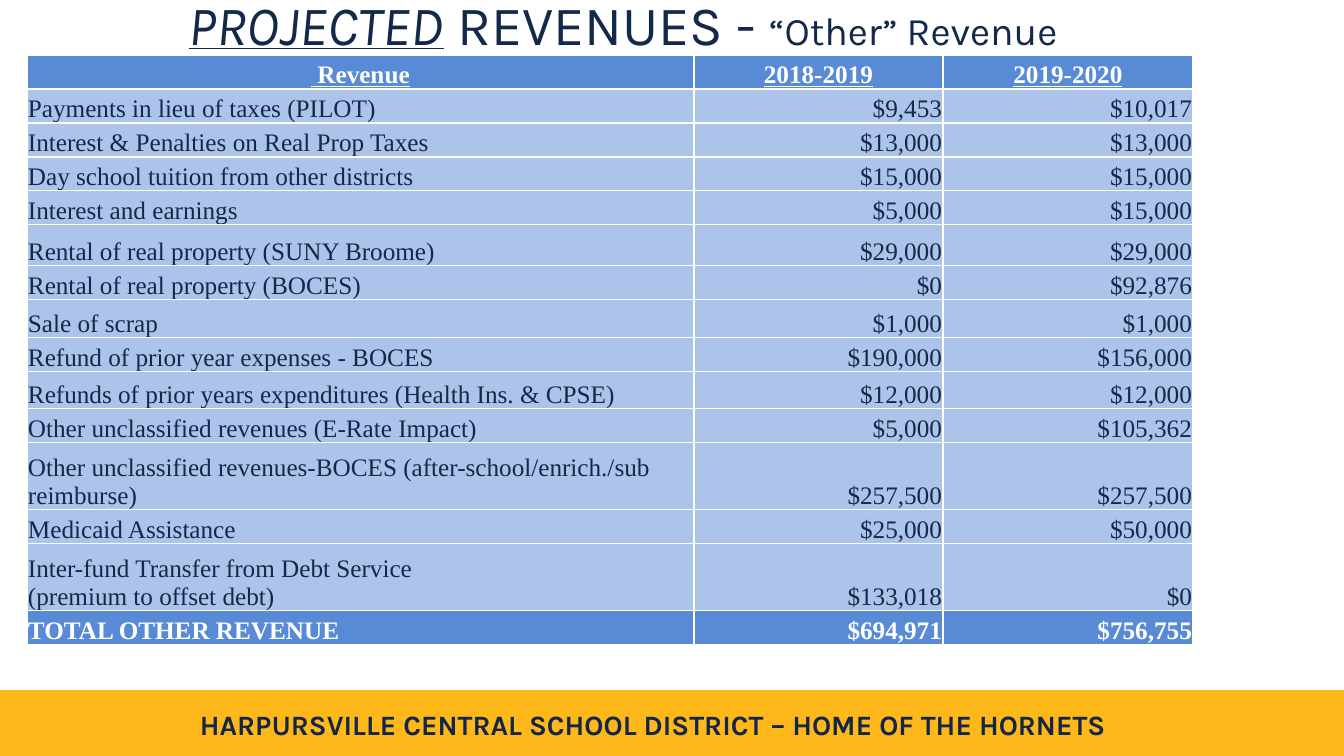
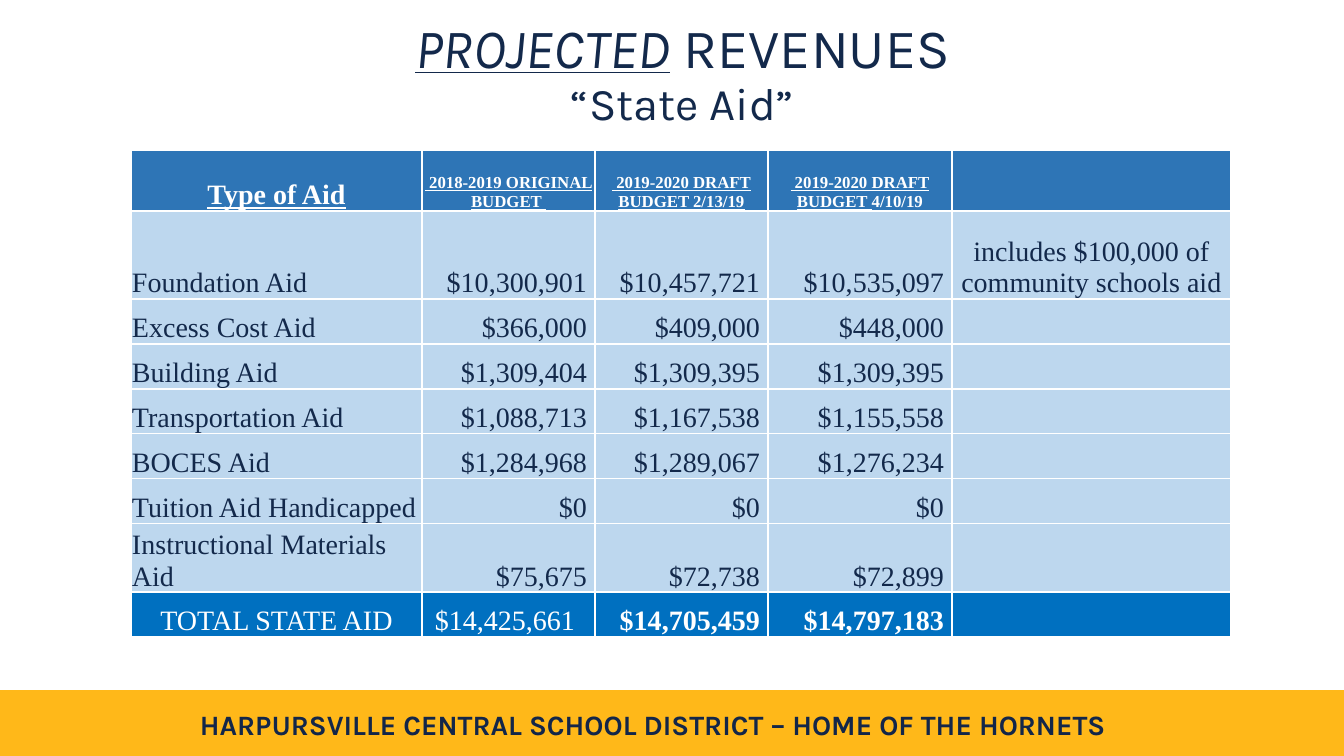
from dataclasses import dataclass

import lxml.etree
import pptx
import pptx.dml.color
import pptx.enum.shapes
import pptx.enum.text
import pptx.oxml.ns
import pptx.presentation
import pptx.shapes.autoshape
import pptx.slide
import pptx.table
import pptx.text.text
import pptx.util

RGBColor = pptx.dml.color.RGBColor
Align = pptx.enum.text.PP_ALIGN
Anchor = pptx.enum.text.MSO_ANCHOR

EMU_PER_PX = 914400 / 100.8
SLIDE_WIDTH, SLIDE_HEIGHT = 1344, 756

WHITE = RGBColor(0xFF, 0xFF, 0xFF)
NAVY = RGBColor(0x13, 0x29, 0x4B)
FOOTER_NAVY = RGBColor(0x13, 0x26, 0x49)
GOLD = RGBColor(0xFF, 0xB8, 0x19)
OTHER_DARK = RGBColor(0x59, 0x8A, 0xD5)
OTHER_LIGHT = RGBColor(0xAC, 0xC4, 0xEA)
AID_HEADER = RGBColor(0x2E, 0x75, 0xB6)
AID_LIGHT = RGBColor(0xBD, 0xD7, 0xEE)
AID_TOTAL = RGBColor(0x00, 0x70, 0xC0)

DISPLAY_FONT = "Karla"
TABLE_FONT = "Times New Roman"
MOTTO = "HARPURSVILLE CENTRAL SCHOOL DISTRICT – HOME OF THE HORNETS"


@dataclass(frozen=True)
class Box:
    left: int
    top: int
    width: int
    height: int


@dataclass(frozen=True)
class Span:
    text: str
    size: float
    color: RGBColor = NAVY
    bold: bool = False
    italic: bool = False
    underline: bool = False


@dataclass(frozen=True)
class Cell:
    lines: tuple[tuple[Span, ...], ...]
    align: Align = Align.LEFT
    right_inset: int = 1


@dataclass(frozen=True)
class Row:
    height: int
    fill: RGBColor
    cells: tuple[Cell, ...]


EMPTY = Cell(())
PROJECTED = Span("PROJECTED", 39.6, italic=True, underline=True)
TITLE_GAP = Span(" ", 39.6)


def px(length: int) -> pptx.util.Emu:
    return pptx.util.Emu(round(length * EMU_PER_PX))


def place(box: Box) -> tuple[pptx.util.Emu, ...]:
    return px(box.left), px(box.top), px(box.width), px(box.height)


def add_span(paragraph: pptx.text.text._Paragraph, span: Span, font_name: str) -> None:
    run = paragraph.add_run()
    run.text = span.text
    font = run.font
    font.name = font_name
    font.size = pptx.util.Pt(span.size)
    font.color.rgb = span.color
    font.bold, font.italic, font.underline = span.bold, span.italic, span.underline


def add_centred_text(slide: pptx.slide.Slide, box: Box, lines: tuple[tuple[Span, ...], ...],
                     line_spacing: float = 1.0) -> pptx.shapes.autoshape.Shape:
    """Add one centred paragraph whose lines are parted by line breaks."""
    text_box = slide.shapes.add_textbox(*place(box))
    frame = text_box.text_frame
    frame.word_wrap = True
    frame.vertical_anchor = Anchor.MIDDLE
    paragraph = frame.paragraphs[0]
    paragraph.alignment = Align.CENTER
    paragraph.line_spacing = line_spacing
    for number, line in enumerate(lines):
        if number:
            paragraph.add_line_break()
        for span in line:
            add_span(paragraph, span, DISPLAY_FONT)
    return text_box


def add_footer(slide: pptx.slide.Slide) -> None:
    band = slide.shapes.add_shape(pptx.enum.shapes.MSO_SHAPE.RECTANGLE,
                                  *place(Box(0, 691, SLIDE_WIDTH, 64)))
    band.shadow.inherit = False
    band.fill.solid()
    band.fill.fore_color.rgb = GOLD
    band.line.color.rgb = GOLD
    band.line.width = pptx.util.Pt(1)
    add_centred_text(slide, Box(177, 702, 952, 44),
                     ((Span(MOTTO, 20, FOOTER_NAVY, bold=True),),))


def add_title(slide: pptx.slide.Slide, box: Box, lines: tuple[tuple[Span, ...], ...]) -> None:
    title = add_centred_text(slide, box, lines, line_spacing=0.9)
    title.fill.solid()
    title.fill.fore_color.rgb = WHITE


def add_white_borders(cell: pptx.table._Cell) -> None:
    qn = pptx.oxml.ns.qn
    properties = cell._tc.get_or_add_tcPr()
    for edge in ("a:lnL", "a:lnR", "a:lnT", "a:lnB"):
        line = lxml.etree.SubElement(properties, qn(edge), w=str(pptx.util.Pt(1)))
        fill = lxml.etree.SubElement(line, qn("a:solidFill"))
        lxml.etree.SubElement(fill, qn("a:srgbClr"), val=str(WHITE))


def fill_cell(target: pptx.table._Cell, cell: Cell, fill: RGBColor) -> None:
    target.margin_left = target.margin_top = px(1)
    target.margin_right = px(cell.right_inset)
    target.margin_bottom = 0
    target.vertical_anchor = Anchor.BOTTOM
    add_white_borders(target)
    target.fill.solid()
    target.fill.fore_color.rgb = fill
    frame = target.text_frame
    for number, line in enumerate(cell.lines):
        paragraph = frame.add_paragraph() if number else frame.paragraphs[0]
        paragraph.alignment = cell.align
        for span in line:
            add_span(paragraph, span, TABLE_FONT)


def add_revenue_table(slide: pptx.slide.Slide, left: int, top: int,
                      widths: tuple[int, ...], rows: list[Row]) -> None:
    box = Box(left, top, sum(widths), sum(row.height for row in rows))
    table = slide.shapes.add_table(len(rows), len(widths), *place(box)).table
    table.first_row = table.horz_banding = False
    for column, width in zip(table.columns, widths):
        column.width = px(width)
    for table_row, row in zip(table.rows, rows):
        table_row.height = px(row.height)
        for target, cell in zip(table_row.cells, row.cells):
            fill_cell(target, cell, row.fill)


def heading(text: str, size: float, *more: Span) -> Cell:
    return Cell(((Span(text, size, WHITE, bold=True, underline=True), *more),), Align.CENTER)


def entry(text: str, size: float, align: Align = Align.LEFT, color: RGBColor = NAVY,
          bold: bool = False, right_inset: int = 1) -> Cell:
    """Make a plain cell with one paragraph for each line of the text."""
    lines = tuple((Span(line, size, color, bold),) for line in text.split("\n"))
    return Cell(lines, align, right_inset)


def other_row(name: str, before: str, after: str, height: int = 34, total: bool = False) -> Row:
    color = WHITE if total else NAVY
    amounts = (entry(amount, 18, Align.RIGHT, color, total) for amount in (before, after))
    return Row(height, OTHER_DARK if total else OTHER_LIGHT,
               (entry(name, 18, color=color, bold=total), *amounts))


def aid_row(name: str, amounts: tuple[str, ...], height: int = 45, note: Cell = EMPTY) -> Row:
    cells = (entry(amount, 20, Align.RIGHT, right_inset=8) for amount in amounts)
    return Row(height, AID_LIGHT, (entry(name, 20), *cells, note))


OTHER_REVENUE = [
    Row(34, OTHER_DARK, (heading(" Revenue", 18), heading("2018-2019", 18),
                         heading("2019-2020", 18))),
    other_row("Payments in lieu of taxes (PILOT)", "$9,453", "$10,017"),
    other_row("Interest & Penalties on Real Prop Taxes", "$13,000", "$13,000"),
    other_row("Day school tuition from other districts", "$15,000", "$15,000"),
    other_row("Interest and earnings", "$5,000", "$15,000"),
    other_row("Rental of real property (SUNY Broome)", "$29,000", "$29,000", 41),
    other_row("Rental of real property (BOCES)", "$0", "$92,876"),
    other_row("Sale of scrap", "$1,000", "$1,000", 38),
    other_row("Refund of prior year expenses - BOCES", "$190,000", "$156,000"),
    other_row("Refunds of prior years expenditures (Health Ins. & CPSE)",
              "$12,000", "$12,000", 37),
    other_row("Other unclassified revenues (E-Rate Impact)", "$5,000", "$105,362"),
    other_row("Other unclassified revenues-BOCES (after-school/enrich./sub reimburse)",
              "$257,500", "$257,500", 67),
    other_row("Medicaid Assistance", "$25,000", "$50,000"),
    other_row("Inter-fund Transfer from Debt Service\n(premium to offset debt)",
              "$133,018", "$0", 67),
    other_row("TOTAL OTHER REVENUE", "$694,971", "$756,755", total=True),
]

STATE_AID = [
    Row(61, AID_HEADER, (
        heading("Type of Aid", 20),
        heading(" 2018-2019 ORIGINAL BUDGET ", 12),
        heading(" 2019-2020 DRAFT BUDGET 2/13/19", 12),
        heading(" 2019-2020 DRAFT BUDGET ", 12, Span("4/10/19", 12, WHITE, bold=True)),
        EMPTY)),
    aid_row("Foundation Aid", ("$10,300,901", "$10,457,721", "$10,535,097"), 88,
            entry("includes $100,000 of community schools aid", 20, Align.CENTER)),
    aid_row("Excess Cost Aid", ("$366,000", "$409,000", "$448,000")),
    aid_row("Building Aid", ("$1,309,404", "$1,309,395", "$1,309,395")),
    aid_row("Transportation Aid", ("$1,088,713", "$1,167,538", "$1,155,558")),
    aid_row("BOCES Aid", ("$1,284,968", "$1,289,067", "$1,276,234")),
    aid_row("Tuition Aid Handicapped", ("$0", "$0", "$0")),
    aid_row("Instructional Materials Aid", ("$75,675", "$72,738", "$72,899"), 63),
    Row(45, AID_TOTAL, (
        entry("TOTAL STATE AID", 20, Align.CENTER, WHITE),
        entry("$14,425,661", 20, Align.CENTER, WHITE, right_inset=8),
        entry("$14,705,459", 20, Align.RIGHT, WHITE, True, 8),
        entry("$14,797,183", 20, Align.RIGHT, WHITE, True, 8),
        EMPTY)),
]


def add_revenue_slide(deck: pptx.presentation.Presentation) -> pptx.slide.Slide:
    slide = deck.slides.add_slide(deck.slide_layouts[6])
    add_footer(slide)
    return slide


def main() -> None:
    deck = pptx.Presentation()
    deck.slide_width, deck.slide_height = px(SLIDE_WIDTH), px(SLIDE_HEIGHT)

    other = add_revenue_slide(deck)
    add_title(other, Box(87, 0, 1072, 54),
              ((PROJECTED, Span(" REVENUES - ", 39.6), Span("“Other” Revenue", 27.9)),))
    add_revenue_table(other, 27, 55, (667, 249, 250), OTHER_REVENUE)

    state = add_revenue_slide(deck)
    add_title(state, Box(103, 23, 1159, 105),
              ((PROJECTED, Span(" REVENUES", 39.6)), (Span("“State Aid”", 32.4),)))
    add_revenue_table(state, 131, 150, (291, 173, 173, 184, 279), STATE_AID)

    deck.save("out.pptx")


if __name__ == "__main__":
    main()
